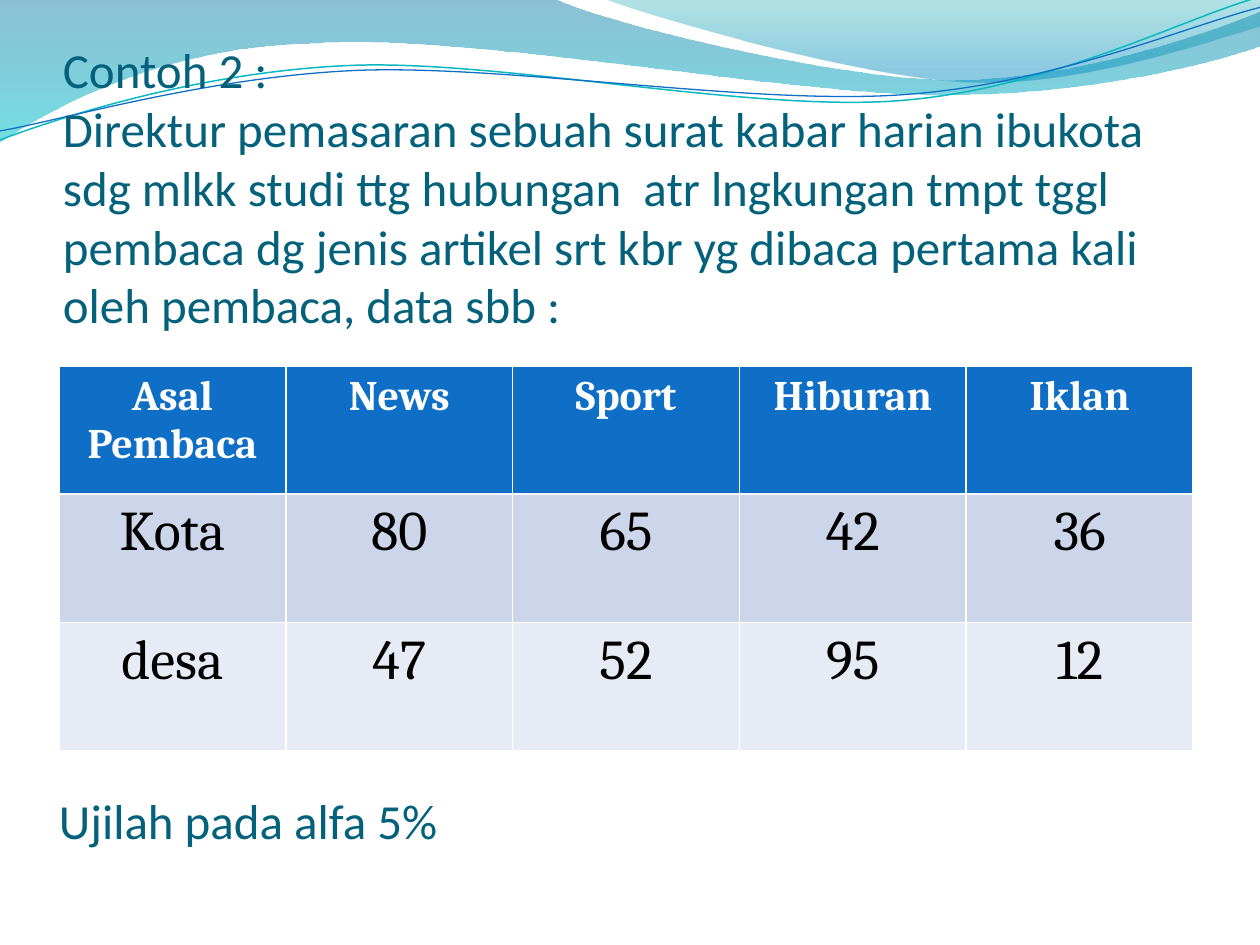
import math

import pptx
import pptx.dml.color
import pptx.enum.text
import pptx.oxml.ns
import pptx.util
from lxml import etree

Cm = pptx.util.Cm
Pt = pptx.util.Pt
qn = pptx.oxml.ns.qn
COLORS = {
    "title": "04617B", "header": "0F6FC6", "odd": "CCD5EA", "even": "E7EBF5",
    "white": "FFFFFF", "black": "000000", "teal line": "0AB8BF",
    "deep blue": "0074A1", "cyan": "00C6CF", "teal": "00A1A9", "sky": "008BBF",
}
INTRO = ("Contoh 2 :\vDirektur pemasaran sebuah surat kabar harian ibukota sdg mlkk "
         "studi ttg hubungan  atr lngkungan tmpt tggl pembaca dg jenis artikel srt kbr "
         "yg dibaca pertama kali oleh pembaca, data sbb :")
READERS = [
    ["Asal Pembaca", "News", "Sport", "Hiburan", "Iklan"],
    ["Kota", "80", "65", "42", "36"],
    ["desa", "47", "52", "95", "12"],
]

# Wave outlines in cm: one point is a straight step, three are a Bezier curve
BAND = [[(0, 0)], [(11.18, -0.03)],
        [(12.09, 0.43), (16.87, 1.6), (19.25, 1.6)],
        [(21.67, 1.6), (24.33, 0.66), (25.4, 0.23)], [(25.43, 0.91)],
        [(24.97, 1.12), (22.1, 1.93), (18.95, 1.91)],
        [(15.8, 1.91), (9.7, 0.71), (6.53, 0.86)],
        [(3.28, 0.91), (1.17, 2.11), (-0.03, 2.87)], [(0, 0)]]
CREST = [[(12.17, -0.03)],
         [(12.93, 0.28), (17.32, 1.57), (19.53, 1.65)],
         [(21.74, 1.75), (24.41, 0.81), (25.4, 0.53)], [(25.4, 0)], [(12.17, -0.03)]]
TEAL_LINE = [[(0, 2.82)],
             [(1.22, 2.36), (4.01, 1.45), (7.04, 1.32)],
             [(10.03, 1.19), (15.06, 2.26), (18.11, 2.03)],
             [(21.16, 1.8), (23.83, 0.38), (25.35, -0.05)]]
BLUE_LINE = [[(0, 2.64)],
             [(1.19, 2.44), (4.17, 1.55), (7.19, 1.42)],
             [(10.24, 1.3), (15.16, 2.13), (18.21, 1.91)],
             [(21.23, 1.7), (23.9, 0.53), (25.4, 0.15)]]
TILT = 357.3


def rgb(name):
    return pptx.dml.color.RGBColor.from_string(COLORS[name])


def turn(outline, center, degrees):
    """Turn an outline clockwise about a center."""
    cos, sin = math.cos(math.radians(degrees)), math.sin(math.radians(degrees))
    cx, cy = center
    return [[(cx + (x - cx) * cos - (y - cy) * sin, cy + (x - cx) * sin + (y - cy) * cos)
             for x, y in step] for step in outline]


def add_outline(page, left, top, outline, closed):
    points = [(Cm(left + x), Cm(top + y)) for step in outline for x, y in step]
    builder = page.shapes.build_freeform(*points[0])
    builder.add_line_segments(points[1:], close=closed)
    shape = builder.convert_to_shape()
    shape.shadow.inherit = False

    # Join each group of three segments into one curve
    segments = list(shape.element.iter(qn("a:lnTo")))
    for step in outline[1:]:
        group, segments = segments[:len(step)], segments[len(step):]
        if len(step) == 3:
            group[0].tag = qn("a:cubicBezTo")
            for segment in group[1:]:
                group[0].append(segment[0])
                segment.getparent().remove(segment)
    return shape


def add_waves(page, left, top):
    # Translucent gradient areas: colour, position, opacity of each stop
    areas = [(BAND, [("deep blue", 0, 45), ("cyan", 1, 55)]),
             (CREST, [("teal", 0, 30), ("sky", 0.8, 45)])]
    for outline, stops in areas:
        shape = add_outline(page, left, top, outline, True)
        shape.line.fill.background()
        shape.fill.gradient()
        shape.fill.gradient_angle = 270
        for stop, (color, position, opacity) in zip(shape.fill.gradient_stops, stops):
            stop.color.rgb = rgb(color)
            stop.position = position
        tints = shape.element.spPr.iter(qn("a:srgbClr"))
        for tint, (color, position, opacity) in zip(tints, stops):
            etree.SubElement(tint, qn("a:alpha"), val=str(opacity * 1000))

    # Thin tilted curves
    curves = [(TEAL_LINE, (12.67, 1.46), "teal line", 0.85),
              (BLUE_LINE, (12.69, 1.5), "header", 0.75)]
    for outline, center, color, width in curves:
        shape = add_outline(page, left, top, turn(outline, center, -TILT), False)
        shape.rotation = TILT
        shape.fill.background()
        shape.line.color.rgb = rgb(color)
        shape.line.width = Pt(width)


def style_paragraph(para, name, size, color, bold=False):
    para.font.name = name
    para.font.size = Pt(size)
    para.font.bold = bold
    para.font.color.rgb = rgb(color)


def add_text(page, left, top, width, height, text):
    box = page.shapes.add_textbox(Cm(left), Cm(top), Cm(width), Cm(height))
    frame = box.text_frame
    frame.word_wrap = True
    frame.vertical_anchor = pptx.enum.text.MSO_ANCHOR.BOTTOM
    frame.margin_left = frame.margin_right = frame.margin_bottom = 0
    frame.margin_top = Cm(0.13)
    frame.text = text
    style_paragraph(frame.paragraphs[0], "Calibri", 28, "title")


def add_reader_table(page, left, top, width, height, rows):
    # The default table style supplies the white rules
    table = page.shapes.add_table(len(rows), len(rows[0]), Cm(left), Cm(top),
                                  Cm(width), Cm(height)).table
    for r, values in enumerate(rows):
        header = r == 0
        for c, value in enumerate(values):
            cell = table.cell(r, c)
            cell.fill.solid()
            cell.fill.fore_color.rgb = rgb("header" if header else "odd" if r % 2 else "even")
            cell.text = value
            para = cell.text_frame.paragraphs[0]
            para.alignment = pptx.enum.text.PP_ALIGN.CENTER
            style_paragraph(para, "Cambria", 24 if header else 32,
                            "white" if header else "black", header)


def main():
    deck = pptx.Presentation()
    deck.slide_width, deck.slide_height = Cm(25.4), Cm(19.05)
    page = deck.slides.add_slide(deck.slide_layouts[6])
    add_waves(page, 0, 0)
    add_text(page, 1.27, 0.93, 22.86, 5.8, INTRO)
    add_reader_table(page, 1.19, 7.38, 22.86, 7.75, READERS)
    add_text(page, 1.19, 15.14, 22.86, 1.98, "Ujilah pada alfa 5%")
    deck.save("out.pptx")


if __name__ == "__main__":
    main()
